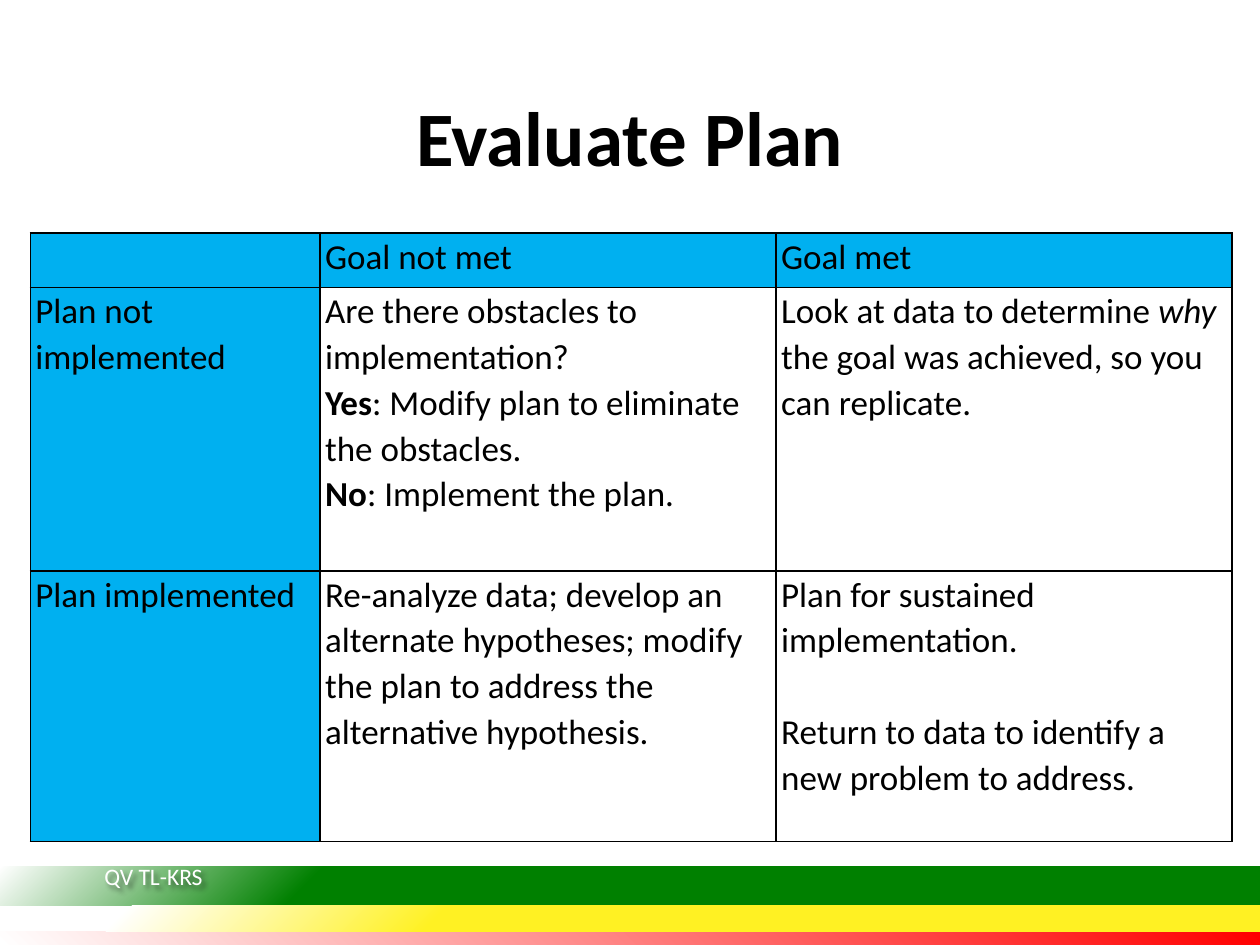
from dataclasses import dataclass

from lxml import etree
from pptx import Presentation
from pptx.dml.color import RGBColor
from pptx.enum.shapes import MSO_SHAPE
from pptx.enum.text import MSO_ANCHOR, PP_ALIGN
from pptx.oxml.ns import qn
from pptx.util import Inches, Pt

RECTANGLE = MSO_SHAPE.RECTANGLE
MIDDLE = MSO_ANCHOR.MIDDLE
CENTER = PP_ALIGN.CENTER

FONT = "Calibri"
COLORS = {
    "text": "000000",
    "paper": "FFFFFF",
    "header": "00B0F0",
    "green": "008000",
    "yellow": "FFF123",
    "red": "FF0000",
}
PAGE_WIDTH, PAGE_HEIGHT = 10, 7.5
COLUMN_WIDTHS = [2.3, 3.62, 3.62]
ROW_HEIGHTS = [0.43, 2.25, 2.15]


@dataclass
class Band:
    color: str
    top: float
    height: float
    solid_until: int
    faded_at: int
    focus_bottom: bool = True


@dataclass
class Span:
    text: str
    bold: bool = False
    italic: bool = False


@dataclass
class Line:
    spans: list[Span]
    space_before: float = 0


def plain(text: str, space_before: float = 0) -> Line:
    return Line([Span(text)], space_before)


BANDS = [
    Band("red", 7.39, 0.11, 0, 100, focus_bottom=False),
    Band("green", 6.88, 0.31, 75, 100),
    Band("yellow", 7.19, 0.2, 65, 90),
]

CELLS = [
    [[], [plain("Goal not met")], [plain("Goal met")]],
    [
        [plain("Plan not implemented")],
        [
            plain("Are there obstacles to implementation?"),
            Line([Span("Yes", bold=True), Span(": Modify plan to eliminate the obstacles.")]),
            Line([Span("No", bold=True), Span(": Implement the plan.")]),
        ],
        [
            Line([
                Span("Look at data to determine "),
                Span("why", italic=True),
                Span(" the goal was achieved, so you can replicate."),
            ])
        ],
    ],
    [
        [plain("Plan implemented")],
        [plain("Re-analyze data; develop an alternate hypotheses; modify "
               "the plan to address the alternative hypothesis.")],
        [
            plain("Plan for sustained implementation."),
            plain("Return to data to identify a new problem to address.", space_before=26),
        ],
    ],
]


def rgb(name: str) -> RGBColor:
    return RGBColor.from_string(COLORS[name])


def style_font(font, size: float, color: str = "text", bold: bool = False,
               italic: bool = False) -> None:
    font.name, font.size, font.bold, font.italic = FONT, Pt(size), bold, italic
    font.color.rgb = rgb(color)


def draw_band(page, band: Band) -> None:
    """Draw a full-width band that fades to white away from its right corner."""
    box = page.shapes.add_shape(RECTANGLE, 0, Inches(band.top),
                                Inches(PAGE_WIDTH), Inches(band.height))
    box.shadow.inherit = False
    box.line.fill.background()
    box.fill.gradient()
    stops = zip(box.fill.gradient_stops, (band.color, "paper"),
                (band.solid_until, band.faded_at))
    for stop, color, position in stops:
        stop.color.rgb = rgb(color)
        stop.position = position / 100
    gradient = box._element.spPr.find(qn("a:gradFill"))
    gradient.remove(gradient.find(qn("a:lin")))
    radial = etree.SubElement(gradient, qn("a:path"), path="circle")
    vertical = {"t": "100000"} if band.focus_bottom else {"b": "100000"}
    etree.SubElement(radial, qn("a:fillToRect"), l="100000", **vertical)


def add_soft_shadow(box) -> None:
    effects = etree.SubElement(box._element.spPr, qn("a:effectLst"))
    shadow = etree.SubElement(effects, qn("a:outerShdw"), blurRad="38100",
                              dist="38100", dir="2700000")
    color = etree.SubElement(shadow, qn("a:srgbClr"), val=COLORS["text"])
    etree.SubElement(color, qn("a:alpha"), val="45000")


def draw_footer(page) -> None:
    box = page.shapes.add_textbox(Inches(0.73), Inches(6.79), Inches(1.92), Inches(0.33))
    box.text_frame.word_wrap = True
    box.text_frame.text = "QV TL-KRS"
    style_font(box.text_frame.paragraphs[0].runs[0].font, 13.5, "paper")
    add_soft_shadow(box)


def add_borders(cell) -> None:
    properties = cell._tc.get_or_add_tcPr()
    for index, side in enumerate(("lnL", "lnR", "lnT", "lnB")):
        border = etree.Element(qn(f"a:{side}"), w=str(Pt(1)))
        fill = etree.SubElement(border, qn("a:solidFill"))
        etree.SubElement(fill, qn("a:srgbClr"), val=COLORS["text"])
        properties.insert(index, border)


def fill_cell(cell, lines: list[Line], is_header: bool) -> None:
    cell.margin_left = cell.margin_right = Inches(0.04)
    cell.margin_top = cell.margin_bottom = 0
    if is_header:
        cell.fill.solid()
        cell.fill.fore_color.rgb = rgb("header")
    else:
        cell.fill.background()
    add_borders(cell)
    frame = cell.text_frame
    for index, line in enumerate(lines):
        para = frame.add_paragraph() if index else frame.paragraphs[0]
        para.line_spacing = 1.07
        para.space_before = Pt(line.space_before)
        for part in line.spans:
            span = para.add_run()
            span.text = part.text
            style_font(span.font, 20, bold=part.bold, italic=part.italic)


def draw_table(page) -> None:
    frame = page.shapes.add_table(
        len(ROW_HEIGHTS), len(COLUMN_WIDTHS), Inches(0.24), Inches(1.85),
        Inches(sum(COLUMN_WIDTHS)), Inches(sum(ROW_HEIGHTS)))
    table = frame.table
    table.first_row = table.horz_banding = False
    for column, width in zip(table.columns, COLUMN_WIDTHS):
        column.width = Inches(width)
    for r, (height, row) in enumerate(zip(ROW_HEIGHTS, CELLS)):
        table.rows[r].height = Inches(height)
        for c, lines in enumerate(row):
            fill_cell(table.cell(r, c), lines, is_header=r == 0 or c == 0)


def set_title(page) -> None:
    title = page.shapes.title
    title.left, title.top = Inches(0.69), Inches(0.4)
    title.width, title.height = Inches(8.62), Inches(1.45)
    title.text_frame.text = "Evaluate Plan"
    title.text_frame.vertical_anchor = MIDDLE
    para = title.text_frame.paragraphs[0]
    para.alignment, para.line_spacing = CENTER, 0.9
    style_font(para.runs[0].font, 44, bold=True)


def main() -> None:
    deck = Presentation()
    deck.slide_width, deck.slide_height = Inches(PAGE_WIDTH), Inches(PAGE_HEIGHT)
    page = deck.slides.add_slide(deck.slide_layouts.get_by_name("Title Only"))
    for band in BANDS:
        draw_band(page, band)
    draw_footer(page)
    draw_table(page)
    set_title(page)
    deck.save("out.pptx")


if __name__ == "__main__":
    main()
